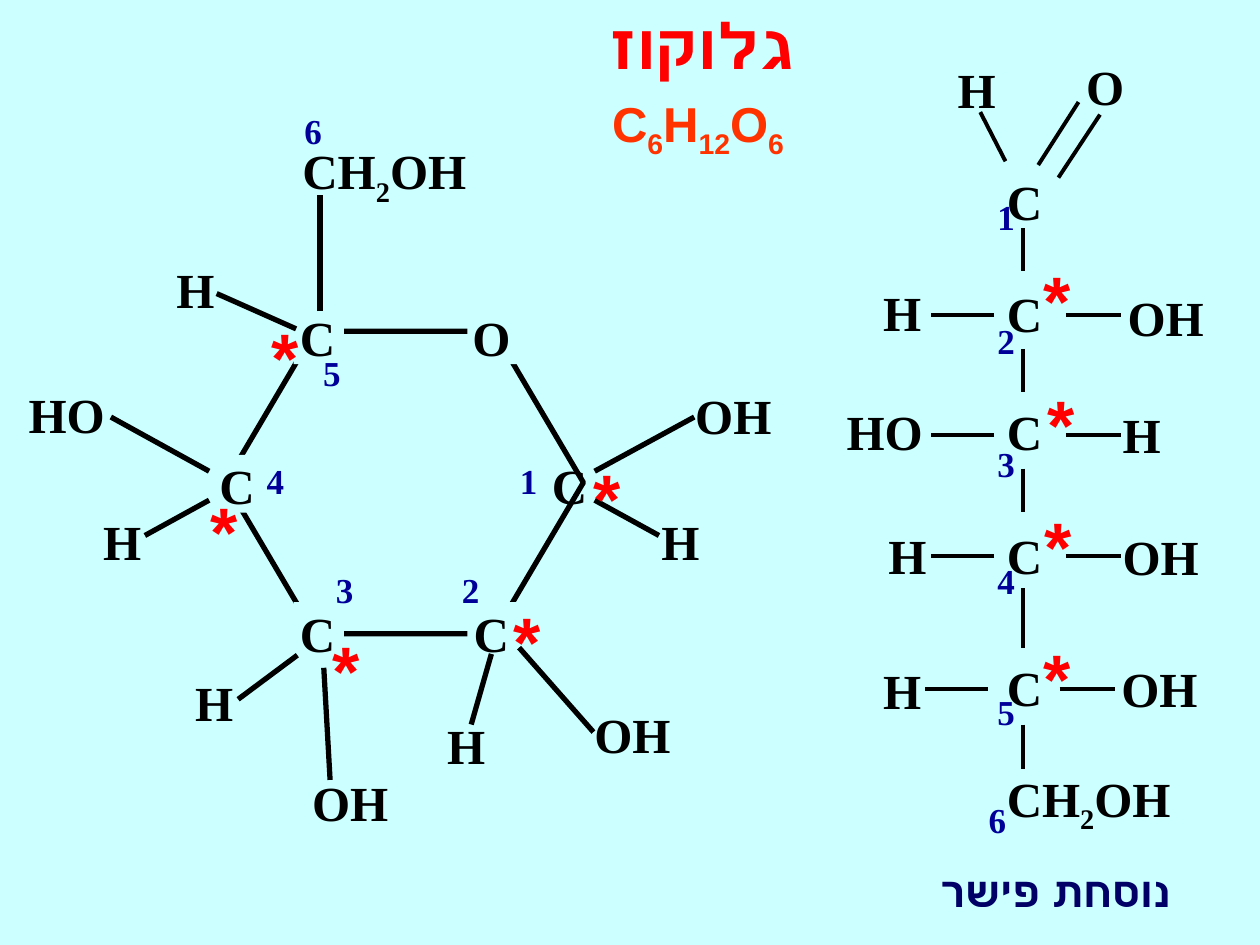
from dataclasses import dataclass
from itertools import groupby

from lxml.etree import SubElement
from pptx import Presentation
from pptx.dml.color import RGBColor
from pptx.enum.shapes import MSO_CONNECTOR, MSO_SHAPE
from pptx.enum.text import MSO_ANCHOR, MSO_AUTO_SIZE, PP_ALIGN
from pptx.oxml.ns import qn
from pptx.util import Emu, Pt

PX = 9144  # EMU in one px, 100 px to the inch


@dataclass(frozen=True)
class Style:
    font: str
    size: int
    color: str


class Theme:
    background = "CCFFFF"
    bond = "000000"
    ring_bond, chain_bond = 3, 2.25
    title = Style("Arial", 36, "FF0000")
    formula = Style("Arial", 28, "FF3300")
    atom = Style("Times New Roman", 28, "000000")
    number = Style("Times New Roman", 20, "000099")
    star = Style("Arial", 40, "FF0000")
    caption = Style("Arial", 24, "000066")


# Content: title and formula, with left, top, width, height
TITLE = ("גלוקוז", (466, 0, 182, 70))
FORMULA = ("C6H12O6", (457, 69, 194, 77))
CAPTION = ("נוסחת פישר", (718, 682, 239, 50))

# Ring form
HEXAGON = (179, 263, 284, 240)
CORNERS = [  # symbol, left, top, hides the outline behind it
    ("C", 408, 357, False), ("C", 144, 357, True), ("C", 346, 474, True),
    ("C", 208, 474, True), ("C", 208, 239, True), ("O", 346, 239, True),
]
RING_BONDS = [
    (472, 374, 551, 331), (472, 397, 523, 425), (254, 247, 254, 155),
    (172, 233, 235, 261), (166, 374, 88, 331), (166, 397, 115, 425),
    (412, 514, 471, 581), (390, 519, 374, 575), (257, 530, 262, 619),
    (236, 520, 189, 555),
]
RING_GROUPS = [
    ("H", 118, 201), ("H", 503, 401), ("H", 60, 401), ("H", 333, 563),
    ("H", 133, 529), ("OH", 529, 301), ("OH", 449, 554), ("OH", 225, 608),
    ("HO", 0, 300), ("CH2OH", 218, 107),
]
GROUP_WIDTHS = {"H": 74, "OH": 106, "HO": 106, "CH2OH": 174}
RING_NUMBERS = [(389, 360), (343, 446), (243, 446), (188, 360), (233, 274), (218, 82)]
RING_STARS = [(450, 356), (386, 469), (243, 492), (146, 382), (194, 244)]

# Open chain (Fischer) form
CHAIN_STARS = [(810, 297), (807, 199), (808, 394), (807, 499)]
CHAIN_NUMBERS = [(768, 150), (768, 249), (768, 346), (768, 439), (768, 543), (761, 629)]
CHAIN_CARBONS = [("C", 136), ("C", 225), ("C", 319), ("C", 417), ("C", 522), ("CH2OH", 610)]
CHAIN_GROUPS = [
    ("O", 862, 45), ("H", 760, 47), ("H", 701, 224), ("OH", 895, 228),
    ("HO", 672, 319), ("H", 891, 321), ("H", 705, 417), ("OH", 891, 418),
    ("H", 701, 524), ("OH", 890, 523),
]
CHAIN_WIDTHS = {"C": 28, "H": 30, "O": 30, "OH": 73, "HO": 73, "CH2OH": 152}
ALDEHYDE_BONDS = [(840, 141, 873, 91), (824, 131, 856, 81), (798, 128, 778, 89)]
BACKBONE_X = 812
BACKBONE = [(181, 215), (277, 311), (372, 406), (467, 514), (575, 610)]
SIDE_BONDS = [(0, 250), (0, 345), (0, 441), (-5, 547)]  # shift, y
SIDE_SPANS = [(789, 739), (846, 890)]


def rgb(color):
    return RGBColor.from_string(color)


def emu(values):
    return [Emu(value * PX) for value in values]


def write(shape, text, style, align=PP_ALIGN.CENTER, margin=None, rtl=False):
    """Fill a shape with text; digits inside a formula become subscripts."""
    frame = shape.text_frame
    frame.word_wrap = True
    frame.auto_size = MSO_AUTO_SIZE.SHAPE_TO_FIT_TEXT
    frame.vertical_anchor = MSO_ANCHOR.TOP
    if margin is not None:
        frame.margin_left = frame.margin_right = margin
        frame.margin_top = frame.margin_bottom = margin
    paragraph = frame.paragraphs[0]
    paragraph.alignment = align
    if rtl:
        paragraph._p.get_or_add_pPr().set("rtl", "1")
    for is_digit, letters in groupby(text, str.isdigit):
        run = paragraph.add_run()
        run.text = "".join(letters)
        run.font.name, run.font.size = style.font, Pt(style.size)
        run.font.bold = True
        run.font.color.rgb = rgb(style.color)
        if is_digit and len(text) > 1:
            run.font._element.set("baseline", "-25000")


def add_label(shapes, text, box, style, **options):
    write(shapes.add_textbox(*emu(box)), text, style, **options)


def add_bond(shapes, ends, width):
    bond = shapes.add_connector(MSO_CONNECTOR.STRAIGHT, *emu(ends))
    bond.line.color.rgb = rgb(Theme.bond)
    bond.line.width = Pt(width)
    SubElement(bond._element.spPr, qn("a:effectLst"))


def add_group(slide):
    return slide.shapes.add_group_shape().shapes


def add_numbers(slide, places):
    shapes = add_group(slide)
    for number, (left, top) in enumerate(places, 1):
        add_label(shapes, str(number), (left, top, 61, 43), Theme.number)


def add_stars(slide, places):
    shapes = add_group(slide)
    for left, top in places:
        add_label(shapes, "*", (left, top, 64, 77), Theme.star)


def add_ring(slide):
    shapes = add_group(slide)
    hexagon = shapes.add_shape(MSO_SHAPE.HEXAGON, *emu(HEXAGON))
    hexagon.adjustments[0] = 0.295
    hexagon.shadow.inherit = False
    hexagon.fill.background()
    hexagon.line.color.rgb = rgb(Theme.bond)
    hexagon.line.width = Pt(Theme.ring_bond)
    for symbol, left, top, hides in CORNERS:
        if hides:
            mask = shapes.add_shape(MSO_SHAPE.RECTANGLE, *emu((left + 25, top + 4, 40, 46)))
            mask.shadow.inherit = False
            mask.fill.solid()
            mask.fill.fore_color.rgb = rgb(Theme.background)
            mask.line.fill.background()
        add_label(shapes, symbol, (left, top, 88, 57), Theme.atom)
    for ends in RING_BONDS:
        add_bond(shapes, ends, Theme.ring_bond)
    for text, left, top in RING_GROUPS:
        add_label(shapes, text, (left, top, GROUP_WIDTHS[text], 57), Theme.atom)


def add_chain(slide):
    shapes = add_group(slide)
    carbons = [(text, 799, top) for text, top in CHAIN_CARBONS]
    for text, left, top in CHAIN_GROUPS + carbons:
        add_label(shapes, text, (left, top, CHAIN_WIDTHS[text], 47), Theme.atom,
                  align=PP_ALIGN.LEFT, margin=0)
    backbone = [(BACKBONE_X, top, BACKBONE_X, bottom) for top, bottom in BACKBONE]
    sides = [(start + shift, y, end + shift, y)
             for shift, y in SIDE_BONDS for start, end in SIDE_SPANS]
    for ends in ALDEHYDE_BONDS + backbone + sides:
        add_bond(shapes, ends, Theme.chain_bond)
    add_label(shapes, *CAPTION, Theme.caption, rtl=True)


def main():
    presentation = Presentation()
    presentation.slide_width, presentation.slide_height = emu((1000, 750))
    slide = presentation.slides.add_slide(presentation.slide_layouts[5])
    slide.background.fill.solid()
    slide.background.fill.fore_color.rgb = rgb(Theme.background)

    # Title placeholder
    text, box = TITLE
    title = slide.shapes.title
    title.left, title.top, title.width, title.height = emu(box)
    write(title, text, Theme.title, rtl=True)

    # Ring on the left, open chain on the right
    add_ring(slide)
    add_numbers(slide, RING_NUMBERS)
    add_label(slide.shapes, *FORMULA, Theme.formula)
    add_stars(slide, RING_STARS)
    add_stars(slide, CHAIN_STARS)
    add_numbers(slide, CHAIN_NUMBERS)
    add_chain(slide)
    presentation.save("out.pptx")


if __name__ == "__main__":
    main()
